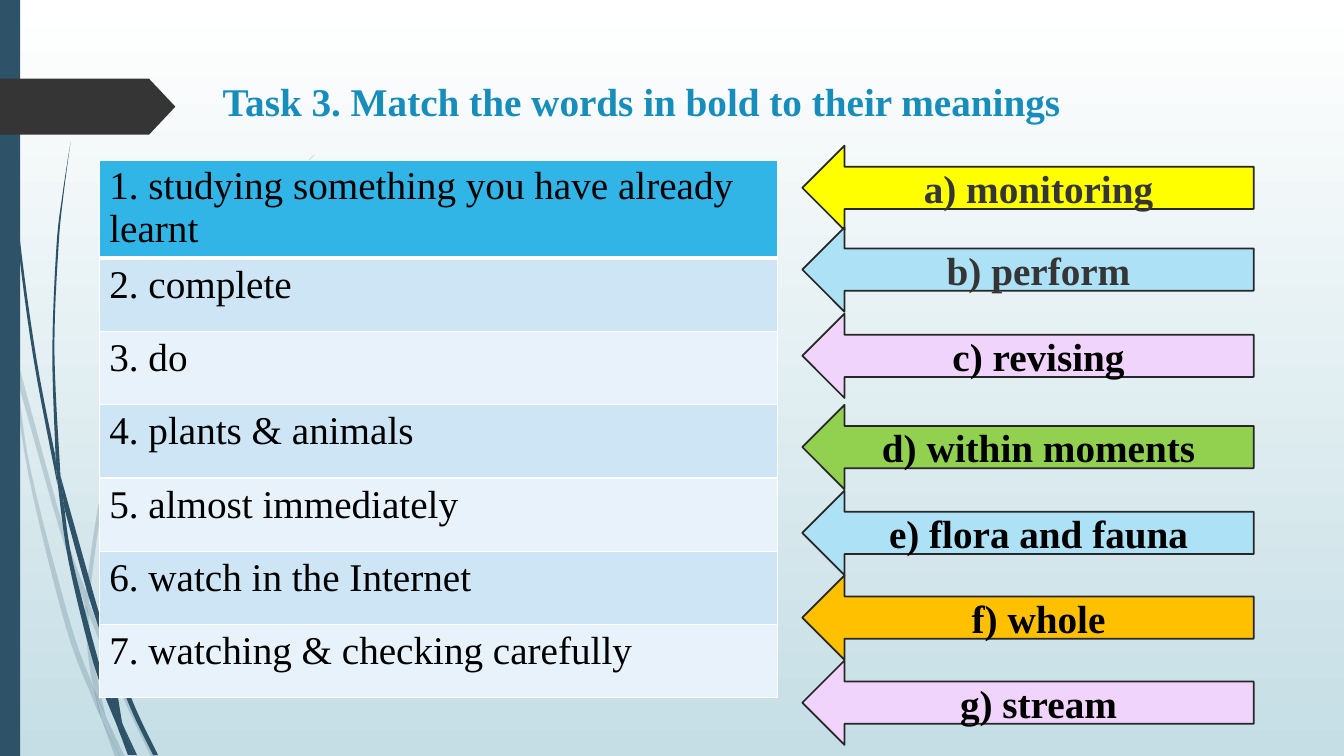
import pptx
import pptx.util
import pptx.dml.color
import pptx.enum.shapes
import pptx.enum.text
import pptx.oxml
import pptx.oxml.ns
from lxml import etree

Pt = pptx.util.Pt
SHAPES = pptx.enum.shapes.MSO_SHAPE
ALIGN = pptx.enum.text.PP_ALIGN
ANCHOR = pptx.enum.text.MSO_ANCHOR

COLOURS = {
    "white": "FFFFFF", "mist": "C5DEE5", "navy": "2E5369", "charcoal": "353535",
    "title": "178DBB", "black": "000000", "outline": "272727", "header": "31B4E6",
    "band": "CEE5F5", "pale": "E8F2FA", "yellow": "FFFF00", "sky": "ADE1F5",
    "lilac": "F1D4FB", "green": "92D050", "orange": "FFC000",
}
FONT = "Times New Roman"
TITLE = "Task 3. Match the words in bold to their meanings"
MEANINGS = [
    "1. studying something you have already learnt", "2. complete", "3. do",
    "4. plants & animals", "5. almost immediately", "6. watch in the Internet",
    "7. watching & checking carefully",
]
WORDS = [
    ("a) monitoring", 104, "yellow", "charcoal"),
    ("b) perform", 162.4, "sky", "charcoal"),
    ("c) revising", 224, "lilac", "black"),
    ("d) within moments", 289.2, "green", "black"),
    ("e) flora and fauna", 350.5, "sky", "black"),
    ("f) whole", 411, "orange", "black"),
    ("g) stream", 471.8, "lilac", "black"),
]
PALE_BLADES = [
    ([(0, 215.3), (7.2, 247.7), (7.9, 252)], [(0, 203), (6.5, 231.8), (7.9, 252)]),
    ([(12.2, 270.7), (41.8, 375.8), (60.5, 431.3)],
     [(10.1, 248.4), (44.6, 374.4), (61.2, 421.9)]),
    ([(63.4, 439.2), (88.6, 499.7), (108, 540.7)],
     [(63.4, 429.1), (66.2, 437), (91.4, 498.2), (111.6, 540.7)]),
    ([(75.6, 511.9), (85.7, 540.7)], [(75.6, 511.9), (89.3, 540.7)]),
    ([(7.9, 252), (20.2, 338.4), (46.8, 447.1), (66.2, 499), (72.7, 514.1)],
     [(7.9, 252), (12.2, 270.7), (22.3, 337.7), (50.4, 445.7), (67, 491.8), (72.7, 514.1)]),
    ([(60.5, 431.3), (62.6, 465.1), (67, 491.8), (75.6, 511.9)],
     [(60.5, 431.3), (63.4, 439.2), (65.5, 465.1), (75.6, 511.9)]),
    ([(224.6, 110.2), (193, 141.8), (164.2, 175.7), (113.8, 250.6), (77, 331.9), (61.2, 421.9)],
     [(224.6, 110.9), (193, 142.6), (164.9, 176.4), (115.2, 251.3), (79.2, 332.6), (63.4, 429.1)]),
    ([(72.7, 514.1), (82.1, 540.7)], [(72.7, 514.1), (85.7, 540.7)]),
    ([(61.2, 421.9), (60.5, 431.3)], [(63.4, 429.1), (63.4, 439.2)]),
    ([(67, 491.8), (72.7, 514.1), (85.7, 540.7)], [(67, 491.8), (75.6, 511.9), (85.7, 540.7)]),
]
DARK_BLADES = [
    ([(2.2, 0), (5, 79.2), (12.2, 167.8), (23.8, 255.6), (41, 346.3)],
     [(2.9, 0), (5.8, 78.5), (13.7, 167), (25.9, 255.6), (39.6, 326.2)]),
    ([(46.1, 363.6), (63.4, 426.2), (76.3, 464.4)], [(43.2, 339.8), (67, 424.8), (76.3, 455.8)]),
    ([(79.9, 472.3), (95, 509.8), (109.4, 539.3)],
     [(79.2, 461.5), (81.4, 467.3), (97.9, 508.3), (113, 539.3)]),
    ([(41, 343.4), (49, 401), (67, 474.5), (84.2, 519.8)],
     [(46.1, 363.6), (51.8, 400.3), (70.6, 473), (79.2, 497.5), (84.2, 519.8)]),
    ([(50.4, 101.5), (44.6, 139), (40.3, 176.4), (37.4, 251.3), (39.6, 323.3)],
     [(50.4, 101.5), (45.4, 139), (41.8, 176.4), (38.9, 251.3), (43.2, 339.8)]),
    ([(87.8, 517.7), (95.8, 539.3)], [(87.8, 517.7), (97.9, 539.3)]),
    ([(39.6, 323.3), (41, 343.4), (46.1, 363.6)], [(39.6, 323.3), (43.2, 339.8), (46.1, 363.6)]),
    ([(187.2, 247.7), (166.3, 268.6), (146.9, 291.6), (112.3, 341.3), (87.8, 396.7), (76.3, 454.3)],
     [(187.9, 247.7), (166.3, 269.3), (147.6, 292.3), (113.8, 342.7), (90, 397.4), (79.2, 461.5)]),
    ([(84.2, 519.8), (91.4, 539.3)], [(84.2, 519.8), (94.3, 539.3)]),
    ([(76.3, 464.4), (79.2, 497.5), (87.8, 517.7)],
     [(76.3, 464.4), (79.9, 472.3), (87.1, 515.5), (87.8, 517.7)]),
    ([(76.3, 454.3), (76.3, 464.4)], [(79.2, 461.5), (79.9, 472.3)]),
    ([(79.2, 497.5), (84.2, 519.8), (93.6, 539.3)], [(79.2, 497.5), (87.8, 517.7), (95.8, 539.3)]),
]
STEPS = 6
TABLE_LEFT, TABLE_TOP, TABLE_WIDTH, ROW_HEIGHT = 70.9, 114.5, 484.5, 52.3
ARROW_LEFT, ARROW_WIDTH, ARROW_HEIGHT = 573.1, 322.4, 60.3


def rgb(name):
    return pptx.dml.color.RGBColor.from_string(COLOURS[name])


def format_text(text_frame, colour, bold):
    paragraph = text_frame.paragraphs[0]
    for run in paragraph.runs:
        run.font.name = FONT
        run.font.size = Pt(28)
        run.font.bold = bold
        run.font.color.rgb = rgb(colour)
    return paragraph


def paint(shape, fill):
    shape.shadow.inherit = False
    shape.fill.solid()
    shape.fill.fore_color.rgb = rgb(fill)
    shape.line.fill.background()


def smooth(points):
    padded = [points[0], *points, points[-1]]
    curve = []
    for before, start, end, after in zip(padded, padded[1:], padded[2:], padded[3:]):
        for step in range(STEPS):
            t = step / STEPS
            curve.append([
                b + (c - a) * t / 2 + (2 * a - 5 * b + 4 * c - d) * t ** 2 / 2
                + (3 * b - a - 3 * c + d) * t ** 3 / 2
                for a, b, c, d in zip(before, start, end, after)
            ])
    return curve + [points[-1]]


def add_blade(slide, left_edge, right_edge, opacity):
    outline = smooth(left_edge) + smooth(right_edge)[::-1]
    corners = [(Pt(x), Pt(y)) for x, y in outline]
    builder = slide.shapes.build_freeform(*corners[0])
    builder.add_line_segments(corners[1:], close=True)
    shape = builder.convert_to_shape()
    paint(shape, "navy")
    if opacity < 100:
        colour = shape.fill._xPr.find(".//" + pptx.oxml.ns.qn("a:srgbClr"))
        etree.SubElement(colour, pptx.oxml.ns.qn("a:alpha"), val=str(opacity * 1000))


def add_borders(cell, widths):
    properties = cell._tc.get_or_add_tcPr()
    for index, (side, width) in enumerate(widths.items()):
        properties.insert(index, pptx.oxml.parse_xml(
            f'<a:ln{side} {pptx.oxml.ns.nsdecls("a")} w="{Pt(width)}"><a:solidFill>'
            f'<a:srgbClr val="{COLOURS["white"]}"/></a:solidFill></a:ln{side}>'))


def add_meanings(slide):
    count = len(MEANINGS)
    table = slide.shapes.add_table(
        count, 1, Pt(TABLE_LEFT), Pt(TABLE_TOP), Pt(TABLE_WIDTH), Pt(ROW_HEIGHT * count)).table
    for index, meaning in enumerate(MEANINGS):
        table.rows[index].height = Pt(ROW_HEIGHT)
        cell = table.cell(index, 0)
        cell.text_frame.text = meaning
        format_text(cell.text_frame, "black", False)
        cell.fill.solid()
        cell.fill.fore_color.rgb = rgb("header" if index == 0 else ("pale", "band")[index % 2])
        add_borders(cell, {"L": 1, "R": 1, "T": 3 if index == 1 else 1,
                           "B": 3 if index == 0 else 1})
    header = table.cell(0, 0)
    header.margin_top, header.margin_bottom = Pt(2.8), Pt(0)


def add_word(slide, word, top, fill, colour):
    arrow = slide.shapes.add_shape(
        SHAPES.LEFT_ARROW, Pt(ARROW_LEFT), Pt(top), Pt(ARROW_WIDTH), Pt(ARROW_HEIGHT))
    paint(arrow, fill)
    arrow.line.color.rgb = rgb("outline")
    arrow.line.width = Pt(1.25)
    arrow.text_frame.text = word
    arrow.text_frame.vertical_anchor = ANCHOR.MIDDLE
    format_text(arrow.text_frame, colour, True).alignment = ALIGN.CENTER


def main():
    presentation = pptx.Presentation()
    presentation.slide_width, presentation.slide_height = Pt(960), Pt(540)
    slide = presentation.slides.add_slide(presentation.slide_layouts[6])

    background = slide.background.fill
    background.gradient()
    background.gradient_angle = 270
    for stop, colour, position in zip(background.gradient_stops, ("white", "mist"), (0, 1)):
        stop.color.rgb = rgb(colour)
        stop.position = position

    for blades, opacity in ((PALE_BLADES, 20), (DARK_BLADES, 100)):
        for left_edge, right_edge in blades:
            add_blade(slide, left_edge, right_edge, opacity)

    side_bar = slide.shapes.add_shape(SHAPES.RECTANGLE, 0, 0, Pt(14.4), Pt(540))
    paint(side_bar, "navy")
    tag = slide.shapes.add_shape(SHAPES.PENTAGON, 0, Pt(56.2), Pt(125.3), Pt(40))
    tag.adjustments[0] = 0.47
    paint(tag, "charcoal")

    title = slide.shapes.add_textbox(Pt(152), Pt(51.5), Pt(702), Pt(65.5))
    title.text_frame.word_wrap = True
    title.text_frame.text = TITLE
    format_text(title.text_frame, "title", True)

    add_meanings(slide)
    for word in WORDS:
        add_word(slide, *word)
    presentation.save("out.pptx")


if __name__ == "__main__":
    main()
